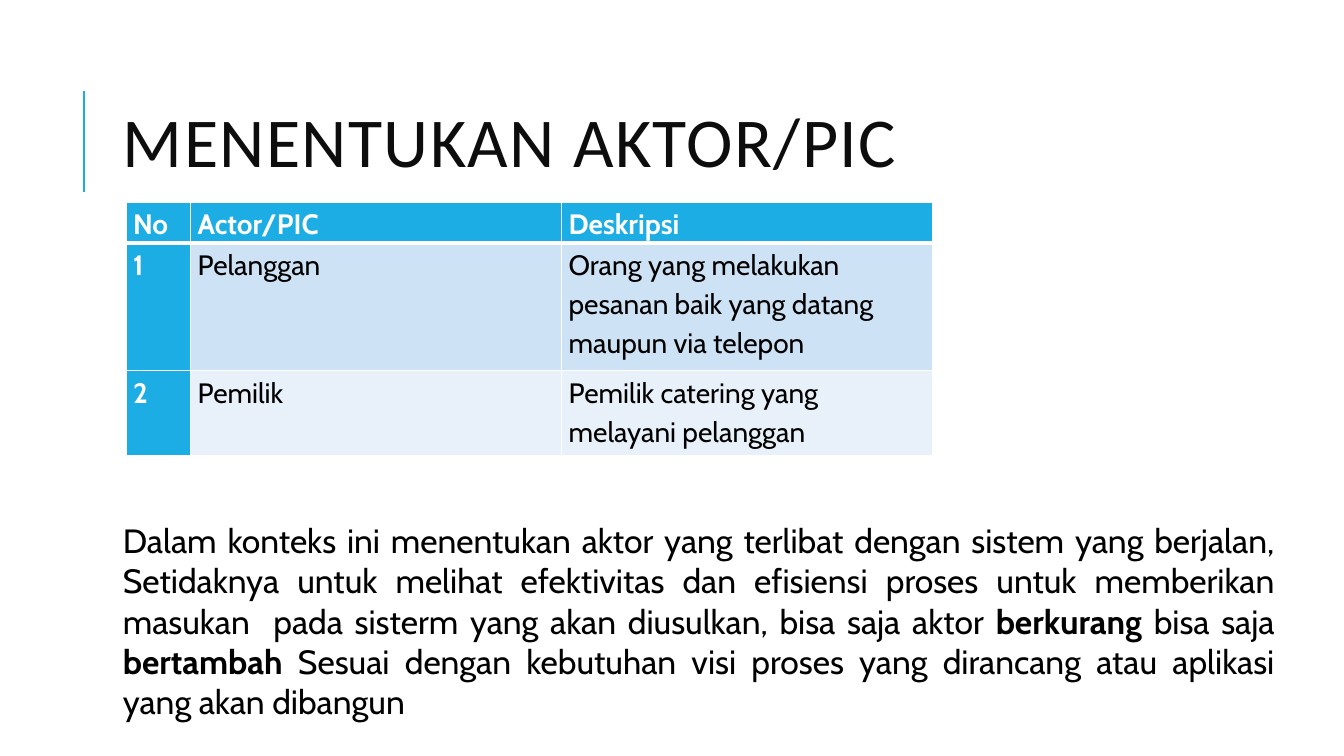
from dataclasses import dataclass

from lxml import etree
from pptx import Presentation
from pptx.dml.color import RGBColor
from pptx.enum.shapes import MSO_CONNECTOR
from pptx.enum.text import MSO_ANCHOR, MSO_AUTO_SIZE, PP_ALIGN
from pptx.oxml.ns import qn
from pptx.util import Inches, Pt

STRAIGHT = MSO_CONNECTOR.STRAIGHT
MIDDLE = MSO_ANCHOR.MIDDLE
GROW = MSO_AUTO_SIZE.SHAPE_TO_FIT_TEXT
JUSTIFY = PP_ALIGN.JUSTIFY


@dataclass(frozen=True)
class Theme:
    accent: str = "1CADE4"
    title_ink: str = "0D0D0D"
    ink: str = "000000"
    white: str = "FFFFFF"
    bands: tuple = ("CDE3F5", "E8F1FA")
    title_font: str = "Calibri"
    body_font: str = "Cabin"
    title_size: int = 50
    table_size: int = 20
    body_size: int = 24


THEME = Theme()

ACTORS = [
    ("No", "Actor/PIC", "Deskripsi"),
    ("1", "Pelanggan", "Orang yang melakukan pesanan baik yang datang maupun via telepon"),
    ("2", "Pemilik", "Pemilik catering yang melayani pelanggan"),
]
COLUMN_WIDTHS = (0.64, 3.68, 3.68)
ROW_HEIGHTS = (0.4, 1.27, 0.84)

EXPLANATION = [
    ("Dalam konteks ini menentukan aktor yang terlibat dengan sistem yang berjalan, "
     "Setidaknya untuk melihat efektivitas dan efisiensi proses untuk memberikan "
     "masukan  pada sisterm yang akan diusulkan, bisa saja aktor ", False),
    ("berkurang ", True),
    ("bisa saja ", False),
    ("bertambah ", True),
    ("Sesuai dengan kebutuhan visi proses yang dirancang atau aplikasi "
     "yang akan dibangun", False),
]


def add_span(para, text, font, size, color, bold=False):
    span = para.add_run()
    span.text = text
    for name, value in {"name": font, "size": Pt(size), "bold": bold}.items():
        setattr(span.font, name, value)
    span.font.color.rgb = RGBColor.from_string(color)
    return span


def add_text_frame(page, box, **settings):
    frame = page.shapes.add_textbox(*map(Inches, box)).text_frame
    for name, value in {"word_wrap": True, **settings}.items():
        setattr(frame, name, value)
    return frame


def add_title(page, box, text):
    left, top, width, height = box
    rule_left, rule_top = left - 0.29, top + 0.26
    rule = page.shapes.add_connector(
        STRAIGHT, *map(Inches, (rule_left, rule_top + 1, rule_left, rule_top)))
    rule.line.color.rgb = RGBColor.from_string(THEME.accent)
    rule.line.width = Pt(1.5)
    etree.SubElement(rule._element.spPr, qn("a:effectLst"))

    para = add_text_frame(page, box, vertical_anchor=MIDDLE).paragraphs[0]
    para.line_spacing = 0.8
    span = add_span(para, text, THEME.title_font, THEME.title_size, THEME.title_ink)
    span.font._element.set("spc", "100")


def set_borders(cell, bottom_width):
    properties = cell._tc.get_or_add_tcPr()
    widths = {"a:lnL": 1, "a:lnR": 1, "a:lnT": 1, "a:lnB": bottom_width}
    for position, (tag, width) in enumerate(widths.items()):
        border = etree.Element(qn(tag), w=str(Pt(width)))
        fill = etree.SubElement(border, qn("a:solidFill"))
        etree.SubElement(fill, qn("a:srgbClr"), val=THEME.white)
        properties.insert(position, border)


def fill_cell(cell, text, row, column):
    heading = row == 0 or column == 0
    background = THEME.accent if heading else THEME.bands[(row - 1) % 2]
    color = THEME.white if heading else THEME.ink
    cell.fill.solid()
    cell.fill.fore_color.rgb = RGBColor.from_string(background)
    margins = {"margin_left": 0.07, "margin_right": 0.07, "margin_top": 0, "margin_bottom": 0}
    for name, value in margins.items():
        setattr(cell, name, Inches(value))
    para = cell.text_frame.paragraphs[0]
    para.line_spacing = 1.15
    add_span(para, text, THEME.body_font, THEME.table_size, color, heading)
    set_borders(cell, 3 if row == 0 else 1)


def add_actor_table(page, box):
    table = page.shapes.add_table(
        len(ACTORS), len(COLUMN_WIDTHS), *map(Inches, box)).table
    table.first_col = True
    for column, width in zip(table.columns, COLUMN_WIDTHS):
        column.width = Inches(width)
    for row, height in zip(table.rows, ROW_HEIGHTS):
        row.height = Inches(height)
    for row, texts in enumerate(ACTORS):
        for column, text in enumerate(texts):
            fill_cell(table.cell(row, column), text, row, column)


def add_explanation(page, box):
    para = add_text_frame(page, box, auto_size=GROW).paragraphs[0]
    para.alignment = JUSTIFY
    for text, bold in EXPLANATION:
        add_span(para, text, THEME.body_font, THEME.body_size, THEME.ink, bold)


def main():
    deck = Presentation()
    deck.slide_width, deck.slide_height = Inches(13.33), Inches(7.5)
    page = deck.slides.add_slide(deck.slide_layouts[6])
    add_title(page, (1.12, 0.64, 10.63, 1.64), "MENENTUKAN AKTOR/PIC")
    add_actor_table(page, (1.25, 2.01, sum(COLUMN_WIDTHS), sum(ROW_HEIGHTS)))
    add_explanation(page, (1.12, 5.11, 11.62, 2.12))
    deck.save("out.pptx")


if __name__ == "__main__":
    main()
